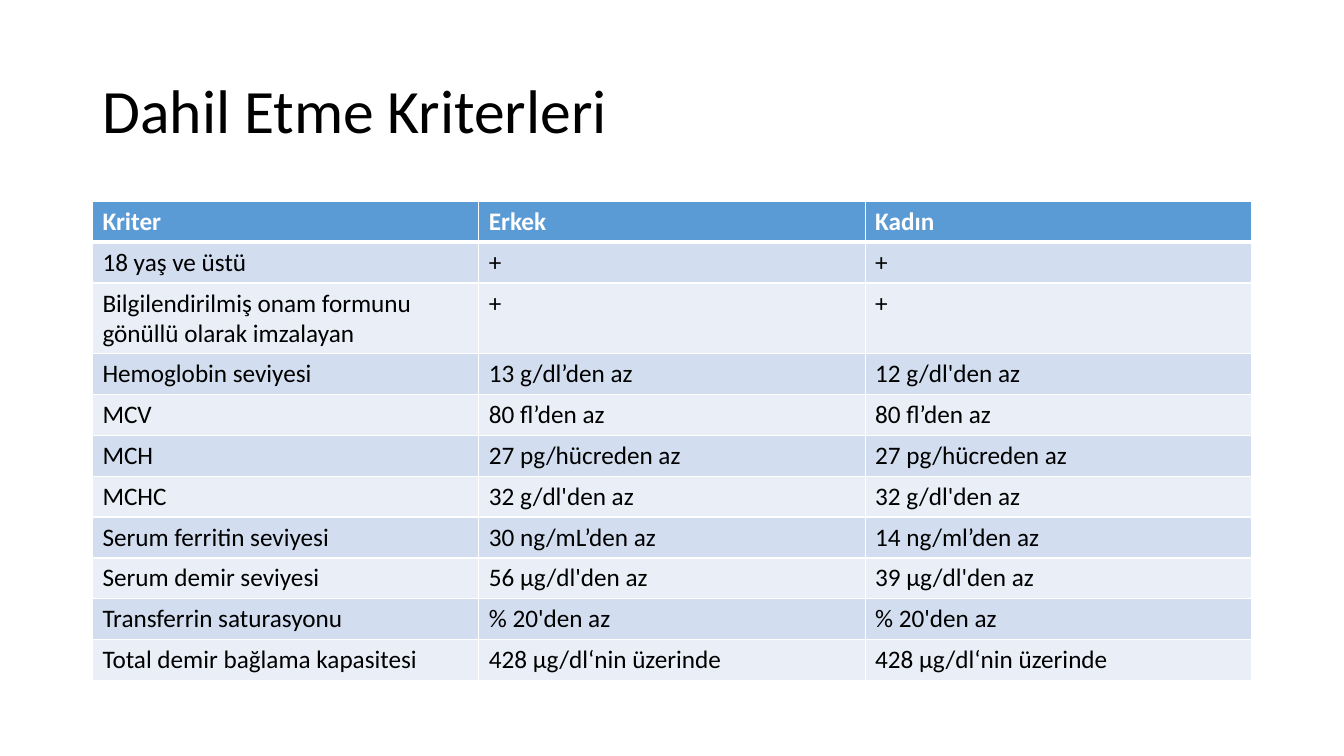
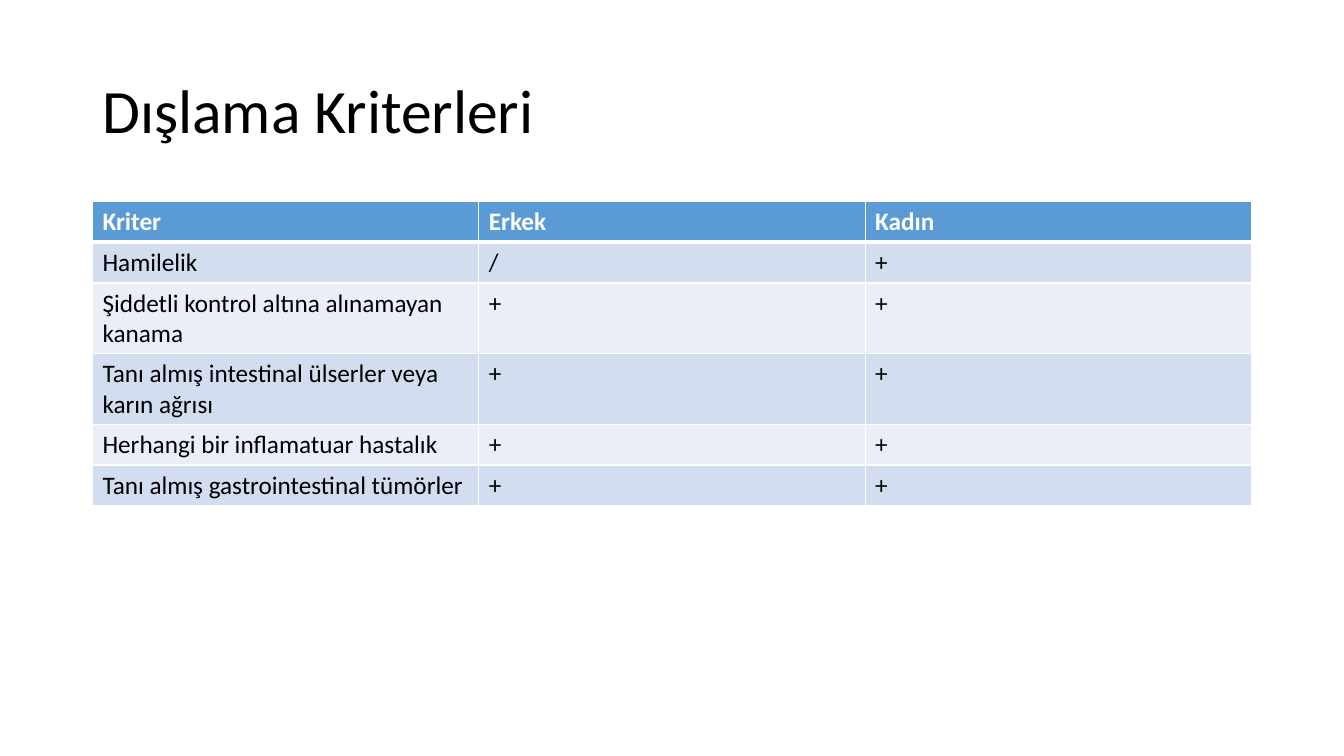
from dataclasses import dataclass

from lxml.etree import SubElement
from pptx import Presentation
from pptx.dml.color import RGBColor
from pptx.enum.text import MSO_ANCHOR
from pptx.oxml.ns import qn
from pptx.util import Cm, Pt


@dataclass(frozen=True)
class Theme:
    font: str = "Calibri"
    title_size: int = 44
    table_size: int = 18
    text: str = "000000"
    header_text: str = "FFFFFF"
    header_fill: str = "5B9BD5"
    band_fills: tuple = ("D2DEEF", "EAEFF7")
    border: str = "FFFFFF"
    thin: int = 1
    thick: int = 3


HEADER = ("Kriter", "Erkek", "Kadın")

INCLUSION = (
    ("18 yaş ve üstü", "+", "+"),
    ("Bilgilendirilmiş onam formunu gönüllü olarak imzalayan", "+", "+"),
    ("Hemoglobin seviyesi", "13 g/dl’den az", "12 g/dl'den az"),
    ("MCV", "80 fl’den az", "80 fl’den az"),
    ("MCH", "27 pg/hücreden az", "27 pg/hücreden az"),
    ("MCHC", "32 g/dl'den az", "32 g/dl'den az"),
    ("Serum ferritin seviyesi", "30 ng/mL’den az", "14 ng/ml’den az"),
    ("Serum demir seviyesi", "56 µg/dl'den az", "39 µg/dl'den az"),
    ("Transferrin saturasyonu", "% 20'den az", "% 20'den az"),
    ("Total demir bağlama kapasitesi", "428 µg/dl‘nin üzerinde", "428 µg/dl‘nin üzerinde"),
)

EXCLUSION = (
    ("Hamilelik", "/", "+"),
    ("Şiddetli kontrol altına alınamayan kanama", "+", "+"),
    ("Tanı almış intestinal ülserler veya karın ağrısı", "+", "+"),
    ("Herhangi bir inflamatuar hastalık", "+", "+"),
    ("Tanı almış gastrointestinal tümörler", "+", "+"),
)


class CriteriaDeck:
    left, width = Cm(2.33), Cm(29.21)
    title_top, title_height = Cm(1.01), Cm(3.68)
    table_top, row_height = Cm(5.07), Cm(1.03)

    def __init__(self, theme):
        self.theme = theme
        self.deck = Presentation()
        self.deck.slide_width, self.deck.slide_height = Cm(33.87), Cm(19.05)
        self.page = None

    def add_page(self):
        self.page = self.deck.slides.add_slide(self.deck.slide_layouts[6])

    def set_font(self, para, size, color, bold=False):
        font = para.font
        font.name, font.size, font.bold = self.theme.font, Pt(size), bold
        font.color.rgb = RGBColor.from_string(color)

    def add_title(self, text):
        box = self.page.shapes.add_textbox(
            self.left, self.title_top, self.width, self.title_height)
        frame = box.text_frame
        frame.word_wrap = True
        frame.vertical_anchor = MSO_ANCHOR.MIDDLE
        para = frame.paragraphs[0]
        para.text = text
        para.line_spacing = 0.9
        self.set_font(para, self.theme.title_size, self.theme.text)

    def add_borders(self, cell, row_index):
        """Draw thin cell edges, with a thick line between header and body."""
        theme = self.theme
        widths = {
            "a:lnL": theme.thin,
            "a:lnR": theme.thin,
            "a:lnT": theme.thick if row_index == 1 else theme.thin,
            "a:lnB": theme.thick if row_index == 0 else theme.thin,
        }
        properties = cell._tc.get_or_add_tcPr()
        for edge, width in widths.items():
            line = SubElement(properties, qn(edge), w=str(Pt(width)))
            fill = SubElement(line, qn("a:solidFill"))
            SubElement(fill, qn("a:srgbClr"), val=theme.border)

    def add_table(self, rows):
        theme = self.theme
        table = self.page.shapes.add_table(
            len(rows), len(rows[0]), self.left, self.table_top,
            self.width, self.row_height * len(rows)).table
        for row_index, row in enumerate(rows):
            is_header = row_index == 0
            fill = theme.header_fill if is_header else theme.band_fills[(row_index - 1) % 2]
            color = theme.header_text if is_header else theme.text
            for column_index, text in enumerate(row):
                cell = table.cell(row_index, column_index)
                self.add_borders(cell, row_index)
                cell.fill.solid()
                cell.fill.fore_color.rgb = RGBColor.from_string(fill)
                cell.text = text
                self.set_font(cell.text_frame.paragraphs[0], theme.table_size, color, is_header)


def main():
    criteria = CriteriaDeck(Theme())
    for title, rows in (("Dahil Etme Kriterleri", INCLUSION),
                        ("Dışlama Kriterleri", EXCLUSION)):
        criteria.add_page()
        criteria.add_title(title)
        criteria.add_table((HEADER, *rows))
    criteria.deck.save("out.pptx")


if __name__ == "__main__":
    main()
